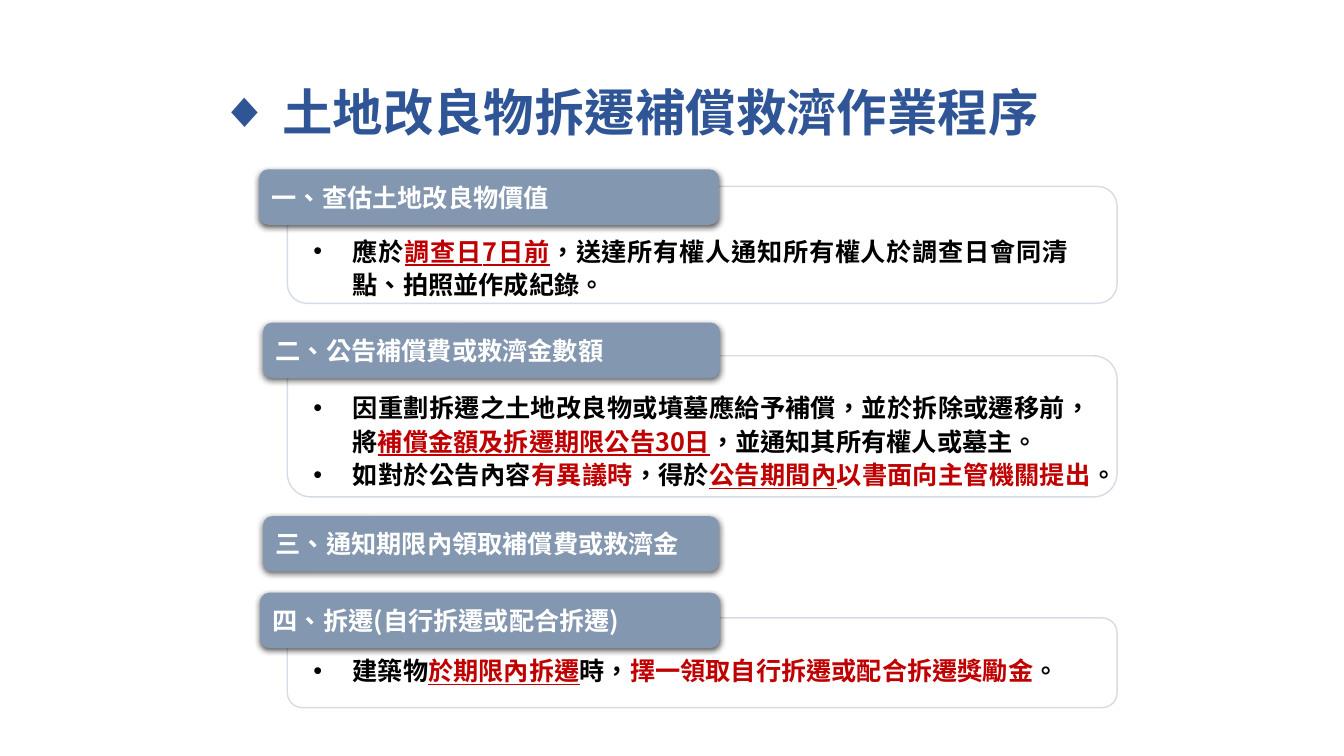
from dataclasses import dataclass

import lxml.etree
import pptx
import pptx.dml.color
import pptx.enum.shapes
import pptx.enum.text
import pptx.oxml.ns
import pptx.util

PX = 9144  # 100 px to the inch
FONT = "Noto Sans CJK SC"
COLORS = {
    "title": "2F5597", "text": "000000", "key": "C00000",
    "heading": "8497B0", "white": "FFFFFF", "outline": "D6DCE5",
}
SHADOW = dict(blurRad=57150, dist=19050, dir=5400000, algn="ctr", rotWithShape=0)
Box = tuple[int, int, int, int]


@dataclass
class Span:
    text: str
    color: str = "text"
    underline: bool = False


@dataclass
class Detail:
    panel: Box
    text_box: Box
    paragraphs: list[list[Span]]
    line_spacing: object


@dataclass
class Step:
    heading: str
    box: Box
    detail: Detail | None = None


EXACT = pptx.util.Pt(24)
STEPS = [
    Step("一、查估土地改良物價值", (257, 168, 456, 55), Detail(
        (285, 185, 823, 116), (301, 226, 768, 75), [[
            Span("應於"), Span("調查日7日前", "key", True),
            Span("，送達所有權人通知所有權人於調查日會同清點、拍照並作成紀錄。"),
        ]], EXACT)),
    Step("二、公告補償費或救濟金數額", (261, 320, 453, 55), Detail(
        (285, 353, 823, 140), (301, 381, 791, 108), [[
            Span("因重劃拆遷之土地改良物或墳墓應給予補償，並於拆除或遷移前，將"),
            Span("補償金額及拆遷期限公告30日", "key", True),
            Span("，並通知其所有權人或墓主。"),
        ], [
            Span("如對於公告內容"), Span("有異議時", "key"), Span("，得於"),
            Span("公告期間內", "key", True),
            Span("以書面向主管機關提出", "key"), Span("。"),
        ]], EXACT)),
    Step("三、通知期限內領取補償費或救濟金", (261, 512, 452, 55)),
    Step("四、拆遷(自行拆遷或配合拆遷)", (258, 588, 456, 55), Detail(
        (285, 613, 823, 89), (301, 649, 791, 37), [[
            Span("建築物"), Span("於期限內拆遷", "key", True), Span("時，"),
            Span("擇一領取自行拆遷或配合拆遷獎勵金", "key"), Span("。"),
        ]], 0.9)),
]


def emu(box: Box) -> list[int]:
    return [v * PX for v in box]


def rgb(name: str) -> pptx.dml.color.RGBColor:
    return pptx.dml.color.RGBColor.from_string(COLORS[name])


def add_xml(parent, tag: str, **attrs):
    return lxml.etree.SubElement(
        parent, pptx.oxml.ns.qn(tag), {k: str(v) for k, v in attrs.items()})


def add_run(p, span: Span, size: int = 18) -> None:
    r = p.add_run()
    r.text = span.text
    r.font.size = pptx.util.Pt(size)
    r.font.bold = True
    r.font.underline = span.underline
    r.font.color.rgb = rgb(span.color)
    r.font.name = FONT
    rpr = r.font._element
    rpr.set("lang", "zh-TW")
    add_xml(rpr, "a:ea", typeface=FONT)


def set_bullet(p, char: str, indent: int) -> None:
    ppr = p._p.get_or_add_pPr()
    ppr.set("marL", str(indent * PX))
    ppr.set("indent", str(-indent * PX))
    add_xml(ppr, "a:buFont", typeface="Arial")
    add_xml(ppr, "a:buChar", char=char)


def add_round_rect(s, box: Box):
    sp = s.shapes.add_shape(
        pptx.enum.shapes.MSO_SHAPE.ROUNDED_RECTANGLE, *emu(box))
    sp.shadow.inherit = False
    return sp


def add_panel(s, detail: Detail) -> None:
    sp = add_round_rect(s, detail.panel)
    sp.fill.background()
    sp.line.color.rgb = rgb("outline")
    sp.line.width = pptx.util.Pt(1)


def add_detail_text(s, detail: Detail) -> None:
    tf = s.shapes.add_textbox(*emu(detail.text_box)).text_frame
    tf.word_wrap = True
    tf.auto_size = pptx.enum.text.MSO_AUTO_SIZE.SHAPE_TO_FIT_TEXT
    for i, spans in enumerate(detail.paragraphs):
        p = tf.add_paragraph() if i else tf.paragraphs[0]
        p.alignment = pptx.enum.text.PP_ALIGN.JUSTIFY
        p.line_spacing = detail.line_spacing
        set_bullet(p, "•", 39)
        for span in spans:
            add_run(p, span)


def add_heading(s, step: Step) -> None:
    sp = add_round_rect(s, step.box)
    sp.fill.solid()
    sp.fill.fore_color.rgb = rgb("heading")
    sp.line.fill.background()
    effects = sp._element.spPr.find(pptx.oxml.ns.qn("a:effectLst"))
    shadow = add_xml(effects, "a:outerShdw", **SHADOW)
    add_xml(add_xml(shadow, "a:srgbClr", val=COLORS["text"]), "a:alpha", val=63000)
    tf = sp.text_frame
    tf.vertical_anchor = pptx.enum.text.MSO_ANCHOR.MIDDLE
    p = tf.paragraphs[0]
    p.alignment = pptx.enum.text.PP_ALIGN.LEFT
    add_run(p, Span(step.heading, "white"))


def set_title(s, text: str) -> None:
    sp = s.shapes.title
    sp.left, sp.top, sp.width, sp.height = emu((208, 60, 917, 108))
    tf = sp.text_frame
    tf.auto_size = pptx.enum.text.MSO_AUTO_SIZE.NONE
    tf.vertical_anchor = pptx.enum.text.MSO_ANCHOR.MIDDLE
    p = tf.paragraphs[0]
    p.alignment = pptx.enum.text.PP_ALIGN.LEFT
    p.line_spacing = 0.9
    set_bullet(p, "◆", 62)
    add_run(p, Span(text, "title"), 36)


def main() -> None:
    prs = pptx.Presentation()
    prs.slide_width, prs.slide_height = 1333 * PX, 750 * PX
    s = prs.slides.add_slide(prs.slide_layouts.get_by_name("Title Only"))
    set_title(s, "土地改良物拆遷補償救濟作業程序")

    # Outlined panels, their text, then the headings that overlap them
    details = [step.detail for step in STEPS if step.detail]
    for detail in reversed(details):
        add_panel(s, detail)
    for detail in details:
        add_detail_text(s, detail)
    for step in STEPS:
        add_heading(s, step)
    prs.save("out.pptx")


if __name__ == "__main__":
    main()
